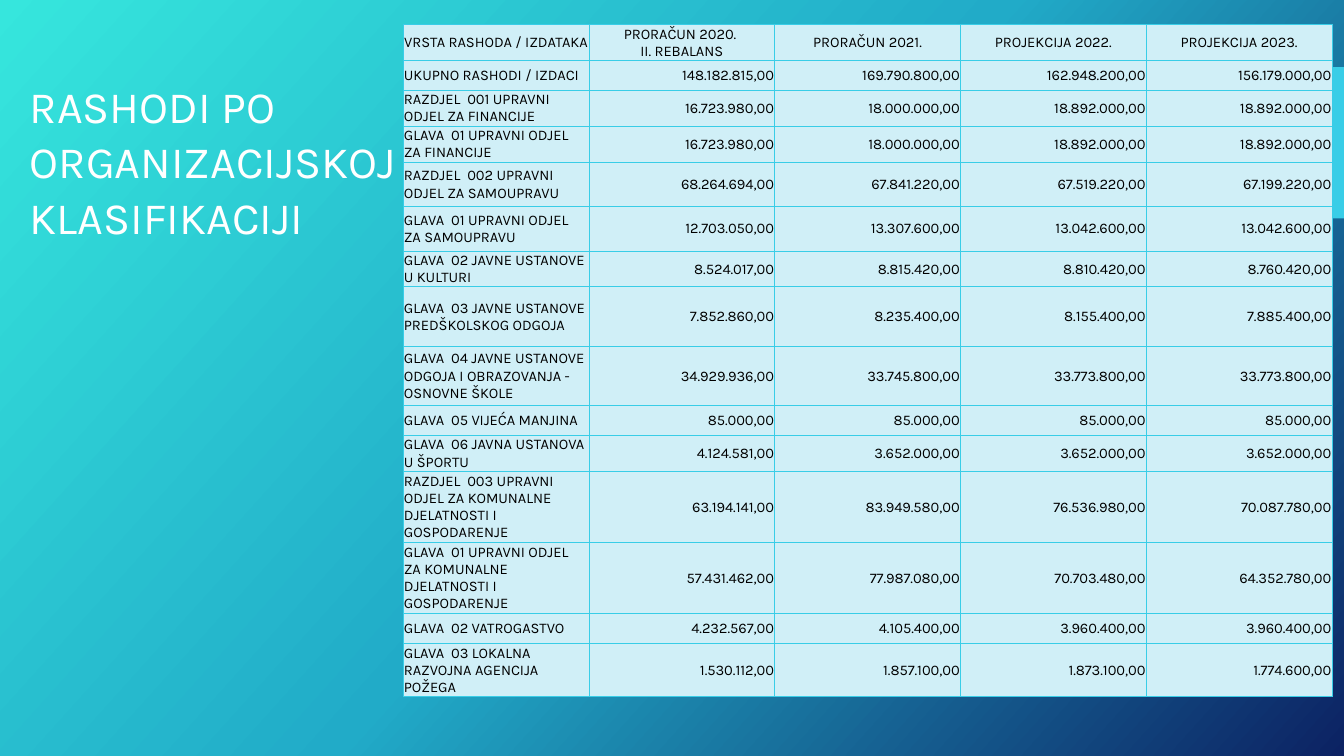
from copy import deepcopy

from lxml import etree
from pptx import Presentation
from pptx.dml.color import RGBColor
from pptx.enum.shapes import MSO_SHAPE
from pptx.enum.text import MSO_ANCHOR, MSO_AUTO_SIZE, PP_ALIGN
from pptx.oxml.ns import qn
from pptx.util import Pt

RECT = MSO_SHAPE.RECTANGLE
MIDDLE = MSO_ANCHOR.MIDDLE
GROW = MSO_AUTO_SIZE.SHAPE_TO_FIT_TEXT
LEFT, CENTER, RIGHT = PP_ALIGN.LEFT, PP_ALIGN.CENTER, PP_ALIGN.RIGHT

FACE = "Karla"
CYAN = "39CDE7"
PALE = "D0EFF7"
STOPS = [(0, "36E6DD"), (0.5, "21ABC8"), (1, "0C2263")]
UNIT = 10.6

HEADS = ["VRSTA RASHODA / IZDATAKA", "PRORAČUN 2020. \nII. REBALANS",
         "PRORAČUN 2021.", "PROJEKCIJA 2022.", "PROJEKCIJA 2023."]
ROWS = [
    (2, "UKUPNO RASHODI / IZDACI",
     "148.182.815,00", "169.790.800,00", "162.948.200,00", "156.179.000,00"),
    (2, "RAZDJEL  001 UPRAVNI ODJEL ZA FINANCIJE",
     "16.723.980,00", "18.000.000,00", "18.892.000,00", "18.892.000,00"),
    (2, "GLAVA  01 UPRAVNI ODJEL ZA FINANCIJE",
     "16.723.980,00", "18.000.000,00", "18.892.000,00", "18.892.000,00"),
    (3, "RAZDJEL  002 UPRAVNI ODJEL ZA SAMOUPRAVU",
     "68.264.694,00", "67.841.220,00", "67.519.220,00", "67.199.220,00"),
    (3, "GLAVA  01 UPRAVNI ODJEL ZA SAMOUPRAVU",
     "12.703.050,00", "13.307.600,00", "13.042.600,00", "13.042.600,00"),
    (2, "GLAVA  02 JAVNE USTANOVE U KULTURI",
     "8.524.017,00", "8.815.420,00", "8.810.420,00", "8.760.420,00"),
    (4, "GLAVA  03 JAVNE USTANOVE PREDŠKOLSKOG ODGOJA",
     "7.852.860,00", "8.235.400,00", "8.155.400,00", "7.885.400,00"),
    (4, "GLAVA  04 JAVNE USTANOVE ODGOJA I OBRAZOVANJA - OSNOVNE ŠKOLE",
     "34.929.936,00", "33.745.800,00", "33.773.800,00", "33.773.800,00"),
    (2, "GLAVA  05 VIJEĆA MANJINA",
     "85.000,00", "85.000,00", "85.000,00", "85.000,00"),
    (2, "GLAVA  06 JAVNA USTANOVA U ŠPORTU",
     "4.124.581,00", "3.652.000,00", "3.652.000,00", "3.652.000,00"),
    (4, "RAZDJEL  003 UPRAVNI ODJEL ZA KOMUNALNE DJELATNOSTI I GOSPODARENJE",
     "63.194.141,00", "83.949.580,00", "76.536.980,00", "70.087.780,00"),
    (4, "GLAVA  01 UPRAVNI ODJEL ZA KOMUNALNE DJELATNOSTI I GOSPODARENJE",
     "57.431.462,00", "77.987.080,00", "70.703.480,00", "64.352.780,00"),
    (2, "GLAVA  02 VATROGASTVO",
     "4.232.567,00", "4.105.400,00", "3.960.400,00", "3.960.400,00"),
    (3, "GLAVA  03 LOKALNA RAZVOJNA AGENCIJA POŽEGA",
     "1.530.112,00", "1.857.100,00", "1.873.100,00", "1.774.600,00"),
]


def paint(color, value):
    """Set a colour from a hex string."""
    color.rgb = RGBColor.from_string(value)


def style(frame, size, value, align):
    """Format every paragraph and run of a text frame."""
    for para in frame.paragraphs:
        para.alignment = align
        for run in para.runs:
            run.font.name = FACE
            run.font.size = Pt(size)
            paint(run.font.color, value)


def add_back(slide):
    """Fill the background with a diagonal gradient of three colours."""
    fill = slide.background.fill
    fill.gradient()
    fill.gradient_angle = 360 - 42
    first = next(slide.element.iter(qn("a:gs")))
    first.addnext(deepcopy(first))
    for stop, (place, value) in zip(fill.gradient_stops, STOPS):
        stop.position = place
        paint(stop.color, value)


def add_tab(slide, left, top, width, height):
    """Draw the accent block at the right edge."""
    tab = slide.shapes.add_shape(RECT, Pt(left), Pt(top), Pt(width), Pt(height))
    tab.shadow.inherit = False
    tab.fill.solid()
    paint(tab.fill.fore_color, CYAN)
    tab.line.fill.background()


def add_title(slide, left, top, width, height):
    """Place and format the title."""
    title = slide.shapes.title
    title.left, title.top = Pt(left), Pt(top)
    title.width, title.height = Pt(width), Pt(height)
    frame = title.text_frame
    frame.text = "RASHODI PO ORGANIZACIJSKOJ KLASIFIKACIJI"
    frame.word_wrap = True
    frame.auto_size = GROW
    frame.vertical_anchor = MIDDLE
    frame.paragraphs[0].line_spacing = 1.03
    style(frame, 32, "FFFFFF", LEFT)


def add_edges(cell):
    """Draw thin cyan borders on all four sides of a cell."""
    props = cell._tc.get_or_add_tcPr()
    for spot, side in enumerate(("lnL", "lnR", "lnT", "lnB")):
        line = etree.Element(qn(f"a:{side}"), w=str(Pt(0.75)))
        fill = etree.SubElement(line, qn("a:solidFill"))
        etree.SubElement(fill, qn("a:srgbClr"), val=CYAN)
        props.insert(spot, line)


def fill_cell(cell, text, align):
    """Write one table cell with its fill, margins and borders."""
    cell.text_frame.text = text
    style(cell.text_frame, 10.5, "000000", align)
    cell.vertical_anchor = MIDDLE
    cell.margin_left = cell.margin_right = cell.margin_top = Pt(0.5)
    cell.margin_bottom = Pt(0)
    cell.fill.solid()
    paint(cell.fill.fore_color, PALE)
    add_edges(cell)


def add_budget(slide, left, top, width):
    """Build the budget table from the heads and rows."""
    lines = [(2, *HEADS), *ROWS]
    height = UNIT * sum(line[0] for line in lines)
    table = slide.shapes.add_table(len(lines), len(HEADS), Pt(left), Pt(top),
                                   Pt(width), Pt(height)).table
    for col in table.columns:
        col.width = Pt(width / len(HEADS))
    for r, (units, *texts) in enumerate(lines):
        table.rows[r].height = Pt(UNIT * units)
        for c, text in enumerate(texts):
            align = CENTER if r == 0 else RIGHT if c else LEFT
            fill_cell(table.cell(r, c), text, align)


def main():
    """Build the slide and save it."""
    deck = Presentation()
    deck.slide_width, deck.slide_height = Pt(960), Pt(540)
    slide = deck.slides.add_slide(deck.slide_layouts[5])
    add_back(slide)
    add_tab(slide, 834, 48, 126, 108)
    add_title(slide, 14, 52.5, 316, 124)
    add_budget(slide, 288, 17.5, 663.5)
    deck.save("out.pptx")


if __name__ == "__main__":
    main()
